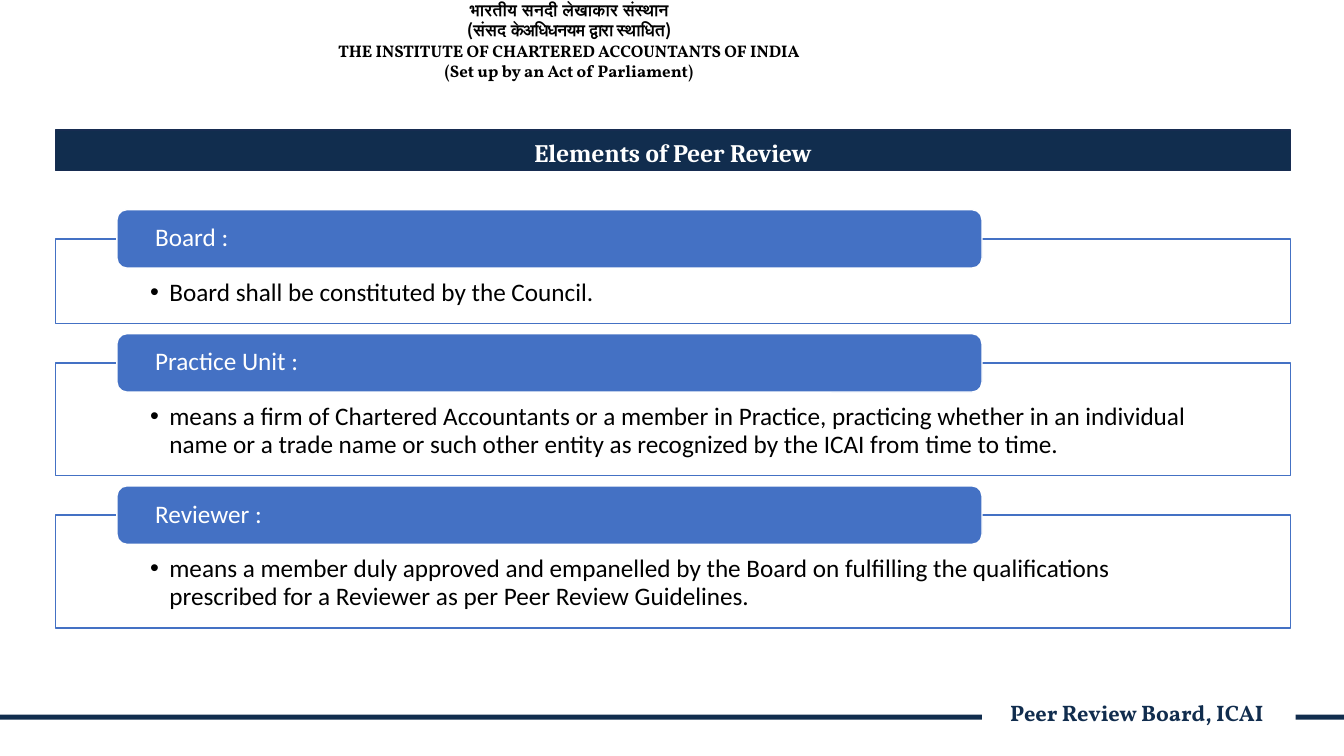
from lxml import etree
from pptx import Presentation
from pptx.dml.color import RGBColor
from pptx.enum.shapes import MSO_SHAPE as SHAPE
from pptx.enum.text import MSO_ANCHOR as ANCHOR, PP_ALIGN as ALIGN
from pptx.oxml.ns import qn
from pptx.util import Inches, Pt

NAVY = RGBColor(0x11, 0x2D, 0x4E)
NAVY_EDGE = RGBColor(0x17, 0x2C, 0x51)
BLUE = RGBColor(0x44, 0x71, 0xC4)
WHITE = RGBColor(0xFF, 0xFF, 0xFF)
BLACK = RGBColor(0, 0, 0)

prs = Presentation()
prs.slide_width, prs.slide_height = Inches(13.33), Inches(7.5)
slide = prs.slides.add_slide(prs.slide_layouts[6])


def add_block(kind, left, top, width, height, fill=None, line=None):
    """Add a preset shape without shadow, with left-aligned text and no margins."""
    block = slide.shapes.add_shape(
        kind, Inches(left), Inches(top), Inches(width), Inches(height))
    block.shadow.inherit = False
    if fill is None:
        block.fill.background()
    else:
        block.fill.solid()
        block.fill.fore_color.rgb = fill
    if line is None:
        block.line.fill.background()
    else:
        block.line.color.rgb = line
        block.line.width = Pt(1)
    frame = block.text_frame
    frame.word_wrap = True
    frame.margin_left = frame.margin_right = frame.margin_top = frame.margin_bottom = 0
    frame.paragraphs[0].alignment = ALIGN.LEFT
    return block


def add_run(paragraph, text, font, size, color, bold=False, spacing=0):
    """Add a run; spacing is the letter spacing in points."""
    run = paragraph.add_run()
    run.text = text
    run.font.name, run.font.size, run.font.bold = font, Pt(size), bold
    run.font.color.rgb = color
    properties = run._r.get_or_add_rPr()
    if spacing:
        properties.set("spc", str(round(spacing * 100)))
    etree.SubElement(properties, qn("a:cs")).set("typeface", font)


# Letterhead: each line is a list of (text, font, letter spacing)
letterhead_lines = [
    [("भारतीय सनदी लेखाकार ", "Arial", 0), ("संस्थान", "Arial", -0.2)],
    [("(", "Noto Sans CJK TC", 0), ("संसद ", "Arial", 0), ("के ", "Arial", -4.2),
     ("अधिधनयम ", "Arial", -0.6), ("द्वारा ", "Arial", -1.2),
     ("स्थाधित", "Arial", -0.1), (")", "Noto Sans CJK TC", 0)],
    [("THE INSTITUTE OF CHARTERED ACCOUNTANTS OF INDIA", "Vollkorn", 0)],
    [("(Set up by an Act of Parliament)", "Vollkorn", 0)],
]
letterhead = slide.shapes.add_textbox(
    Inches(3.15), Inches(0), Inches(4.99), Inches(0.83)).text_frame
letterhead.word_wrap = True
letterhead.margin_left = letterhead.margin_right = 0
letterhead.margin_top = letterhead.margin_bottom = 0
for index, pieces in enumerate(letterhead_lines):
    line = letterhead.add_paragraph() if index else letterhead.paragraphs[0]
    line.alignment = ALIGN.CENTER
    for text, font, spacing in pieces:
        add_run(line, text, font, 12, BLACK, True, spacing)

# Footer rule, interrupted by the board's name
for left, width in [(0, 9.74), (12.85, 0.48)]:
    add_block(SHAPE.RECTANGLE, left, 7.09, width, 0.05, fill=NAVY)

title = add_block(SHAPE.RECTANGLE, 0.55, 1.29, 12.25, 0.4, NAVY, NAVY_EDGE).text_frame
title.margin_top = Inches(0.04)
title.vertical_anchor = ANCHOR.MIDDLE
title.paragraphs[0].alignment = ALIGN.CENTER
add_run(title.paragraphs[0], "Elements of Peer Review", "Cambria", 18, WHITE, True)

# Elements: (heading, definition, panel top, panel height)
elements = [
    ("Board :", "Board shall be constituted by the Council.", 2.37, 0.84),
    ("Practice Unit :",
     "means a firm of Chartered Accountants or a member in Practice, practicing "
     "whether in an individual name or a trade name or such other entity as "
     "recognized by the ICAI from time to time.", 3.6, 1.12),
    ("Reviewer :",
     "means a member duly approved and empanelled by the Board on fulfilling the "
     "qualifications prescribed for a Reviewer as per Peer Review Guidelines.",
     5.11, 1.12),
]
for heading, definition, top, height in elements:
    panel = add_block(SHAPE.RECTANGLE, 0.55, top, 12.25, height, line=BLUE).text_frame
    panel.vertical_anchor = ANCHOR.TOP
    panel.margin_left, panel.margin_right = Inches(0.93), Inches(1.02)
    panel.margin_top = Inches(0.4)
    body = panel.paragraphs[0]
    body.line_spacing = Pt(19.7)
    bullet = body._p.get_or_add_pPr()
    bullet.set("marL", str(Inches(0.2)))
    bullet.set("indent", str(-Inches(0.19)))
    etree.SubElement(bullet, qn("a:buFont")).set("typeface", "Arial")
    etree.SubElement(bullet, qn("a:buChar")).set("char", "•")
    add_run(body, definition, "Calibri", 18, BLACK)

    tab = add_block(SHAPE.ROUNDED_RECTANGLE, 1.16, top - 0.29, 8.58, 0.58, BLUE, WHITE)
    tab.adjustments[0] = 0.17
    tab.text_frame.margin_left = Inches(0.35)
    tab.text_frame.margin_bottom = Inches(0.04)
    tab.text_frame.vertical_anchor = ANCHOR.MIDDLE
    add_run(tab.text_frame.paragraphs[0], heading, "Calibri", 18, WHITE)

footer = slide.shapes.add_textbox(
    Inches(10.02), Inches(6.98), Inches(2.57), Inches(0.25)).text_frame
footer.word_wrap = True
footer.margin_left = footer.margin_right = footer.margin_top = footer.margin_bottom = 0
footer.paragraphs[0].line_spacing = Pt(15.9)
add_run(footer.paragraphs[0], "Peer Review Board, ICAI", "Vollkorn", 16, NAVY, True)

prs.save("out.pptx")
